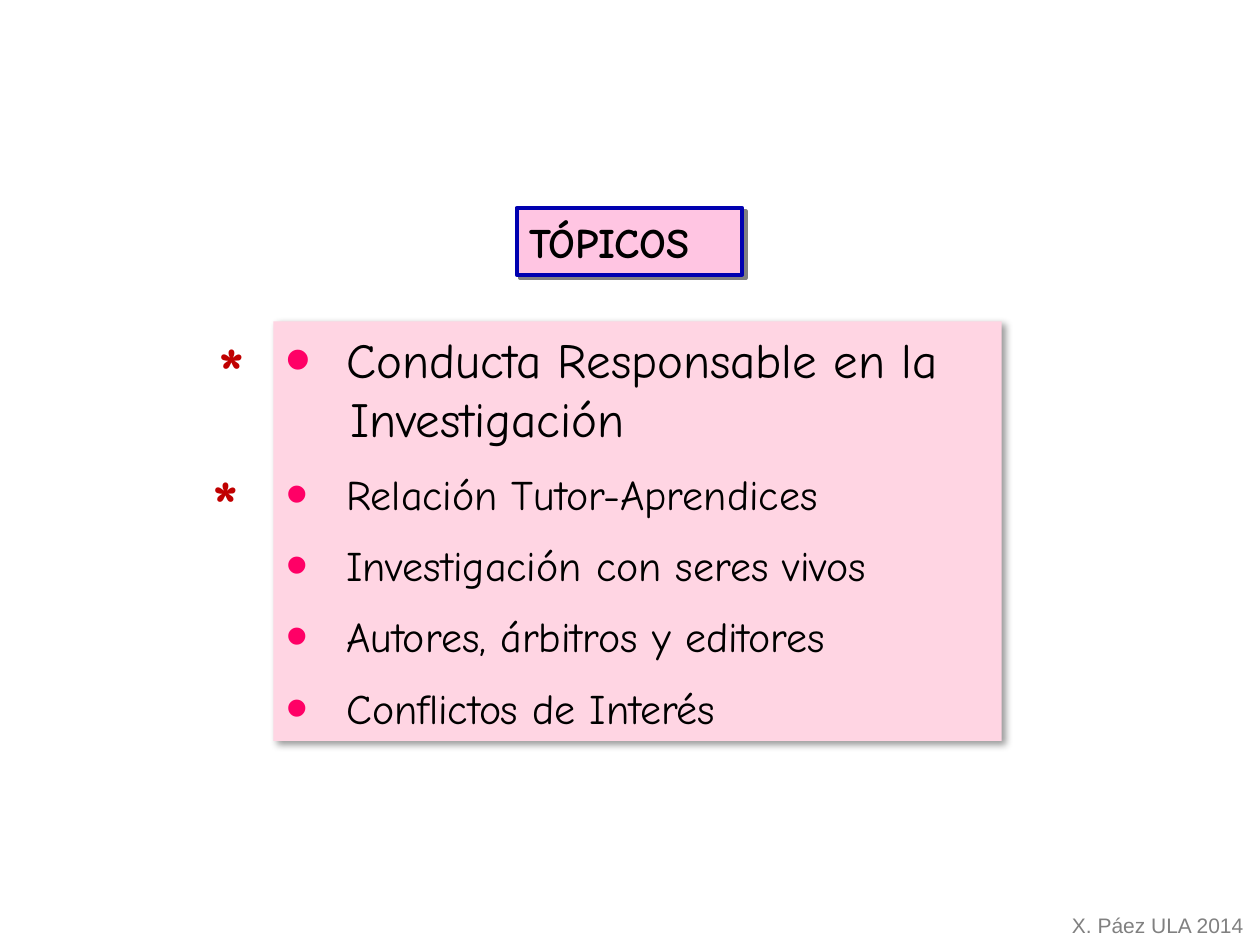
import pptx
import pptx.dml.color
import pptx.enum.shapes
import pptx.enum.text
import pptx.oxml
import pptx.oxml.ns
import pptx.util
from pptx.util import Inches

RGBColor = pptx.dml.color.RGBColor
BLACK = RGBColor(0x00, 0x00, 0x00)
GRAY = RGBColor(0x80, 0x80, 0x80)
RED = RGBColor(0xC0, 0x00, 0x00)
BLUE = RGBColor(0x00, 0x00, 0xB0)
TITLE_PINK = RGBColor(0xFF, 0xC5, 0xE2)
LIST_PINK = RGBColor(0xFF, 0xD5, 0xE3)
BULLET_PINK = RGBColor(0xFF, 0x00, 0x66)
ALIGN = pptx.enum.text.PP_ALIGN
ANCHOR = pptx.enum.text.MSO_ANCHOR
FONT = "Comic Neue"

# Text and size; a line without a bullet continues the topic above it.
TOPICS = [
    ("Conducta Responsable en la", 28, True),
    ("Investigación", 28, False),
    ("Relación Tutor-Aprendices", 24, True),
    ("Investigación con seres vivos", 24, True),
    ("Autores, árbitros y editores", 24, True),
    ("Conflictos de Interés", 24, True),
]


def add_drawing_xml(parent, xml):
    namespace = pptx.oxml.ns.nsdecls("a")
    parent.append(pptx.oxml.parse_xml(xml.replace(">", f" {namespace}>", 1)))


def write(para, text, size, color=BLACK, font=FONT, bold=False, align=ALIGN.LEFT):
    para.alignment = align
    span = para.add_run()
    span.text = text
    span.font.size = pptx.util.Pt(size)
    span.font.name = font
    span.font.bold = bold
    span.font.color.rgb = color


def add_panel(page, left, top, width, height, fill, line=None):
    panel = page.shapes.add_shape(
        pptx.enum.shapes.MSO_SHAPE.RECTANGLE,
        Inches(left), Inches(top), Inches(width), Inches(height))
    panel.fill.solid()
    panel.fill.fore_color.rgb = fill
    if line is None:
        panel.line.fill.background()
    else:
        panel.line.color.rgb = line
        panel.line.width = pptx.util.Pt(2.25)
    panel.shadow.inherit = False
    panel.text_frame.word_wrap = False
    panel.text_frame.vertical_anchor = ANCHOR.MIDDLE
    return panel


def add_shadow(shape, color, opacity, blur, distance):
    """Cast a shadow towards the lower right; opacity in percent, lengths in points."""
    effects = shape._element.spPr.find(pptx.oxml.ns.qn("a:effectLst"))
    add_drawing_xml(
        effects,
        f'<a:outerShdw blurRad="{pptx.util.Pt(blur)}" dist="{pptx.util.Pt(distance)}" '
        f'dir="2700000" algn="tl" rotWithShape="0"><a:srgbClr val="{color}">'
        f'<a:alpha val="{opacity * 1000}"/></a:srgbClr></a:outerShdw>')


def add_label(page, text, left, top, width, height, **style):
    box = page.shapes.add_textbox(
        Inches(left), Inches(top), Inches(width), Inches(height))
    box.text_frame.word_wrap = False
    write(box.text_frame.paragraphs[0], text, **style)


def indent(para, bulleted):
    properties = para._p.get_or_add_pPr()
    if not bulleted:
        properties.set("marL", str(Inches(0.51)))
        return
    properties.set("marL", str(Inches(0.48)))
    properties.set("indent", str(Inches(-0.48)))
    add_drawing_xml(
        properties, f'<a:buClr><a:srgbClr val="{BULLET_PINK}"/></a:buClr>')
    add_drawing_xml(properties, '<a:buSzPct val="150000"></a:buSzPct>')
    add_drawing_xml(properties, '<a:buFont typeface="Arial"></a:buFont>')
    add_drawing_xml(properties, '<a:buChar char="•"></a:buChar>')


def add_topics(page):
    panel = add_panel(page, 2.17, 2.55, 5.78, 3.33, LIST_PINK)
    add_shadow(panel, BLACK, 40, 4, 3)
    frame = panel.text_frame
    for index, (text, size, bulleted) in enumerate(TOPICS):
        para = frame.add_paragraph() if index else frame.paragraphs[0]
        write(para, text, size)
        if index and bulleted:
            para.space_before = pptx.util.Pt(12)
        indent(para, bulleted)


def add_title(page):
    panel = add_panel(page, 4.1, 1.65, 1.79, 0.53, TITLE_PINK, line=BLUE)
    add_shadow(panel, GRAY, 100, 0, 2.8)
    write(panel.text_frame.paragraphs[0], "TÓPICOS", 24, bold=True)


def main():
    deck = pptx.Presentation()
    deck.slide_width, deck.slide_height = Inches(10), Inches(7.5)
    page = deck.slides.add_slide(deck.slide_layouts[6])
    add_topics(page)
    add_title(page)
    add_label(page, "X. Páez ULA 2014", 8.41, 7.19, 1.57, 0.3,
              size=12, color=GRAY, font="Arial")
    for left, top in [(1.59, 2.55), (1.54, 3.61)]:
        add_label(page, "*", left, top, 0.5, 0.77,
                  size=40, color=RED, bold=True, align=ALIGN.CENTER)
    deck.save("out.pptx")


if __name__ == "__main__":
    main()
